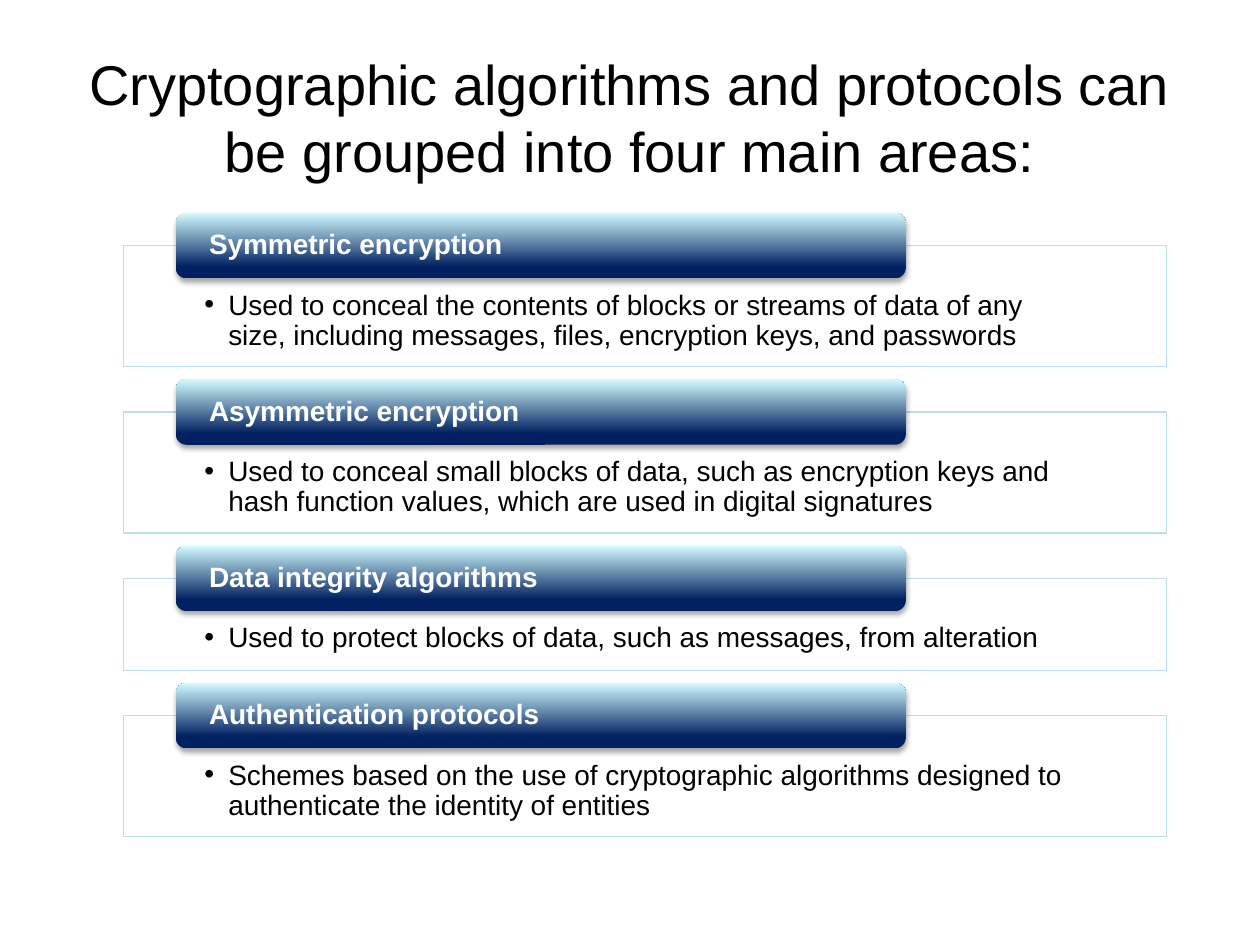
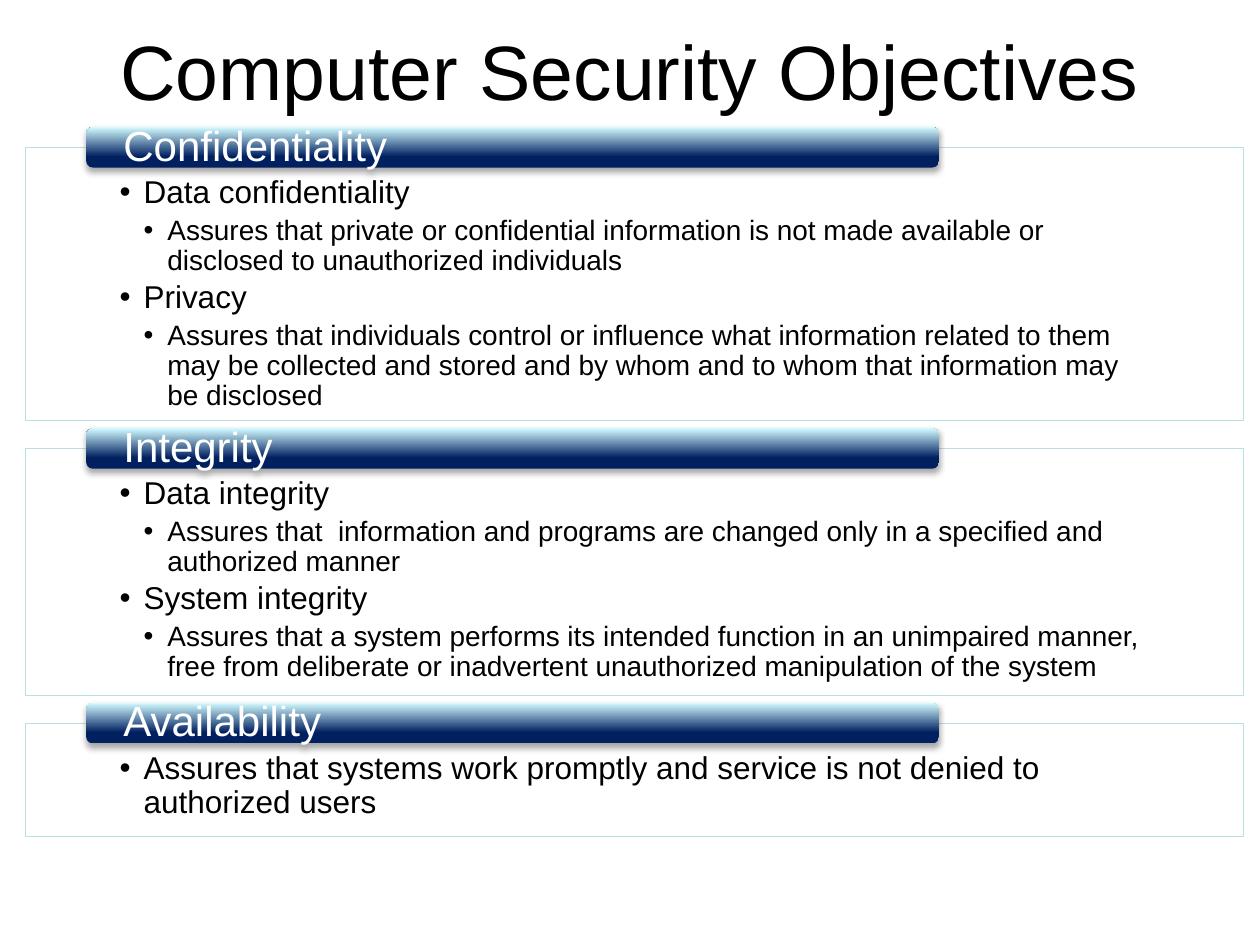
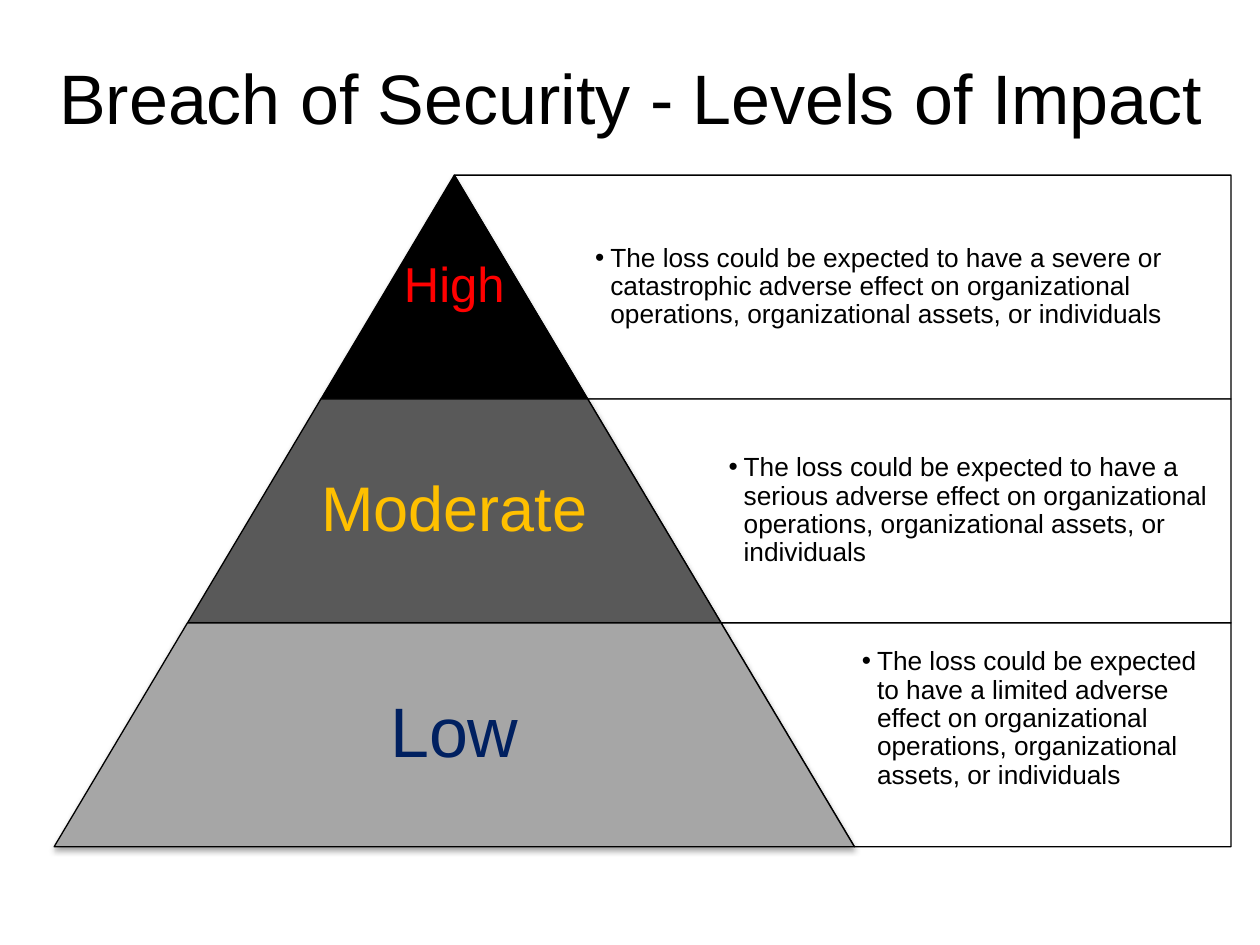
import dataclasses

import lxml.etree
import pptx
import pptx.dml.color
import pptx.enum.shapes
import pptx.enum.text
import pptx.oxml.ns
import pptx.util

RGBColor = pptx.dml.color.RGBColor
Shape = pptx.enum.shapes.MSO_SHAPE
Anchor = pptx.enum.text.MSO_ANCHOR
Align = pptx.enum.text.PP_ALIGN
qn = pptx.oxml.ns.qn

FONT = "Arial"
BLACK = RGBColor(0x00, 0x00, 0x00)
WHITE = RGBColor(0xFF, 0xFF, 0xFF)
NAVY = RGBColor(0x00, 0x20, 0x60)
ICE = RGBColor(0xD3, 0xFB, 0xFF)
PALE_TEAL = RGBColor(0xBB, 0xE0, 0xE3)
DARK_GREY = RGBColor(0x59, 0x59, 0x59)
LIGHT_GREY = RGBColor(0xA6, 0xA6, 0xA6)
RED = RGBColor(0xFF, 0x00, 0x00)
AMBER = RGBColor(0xFF, 0xC0, 0x00)

SLIDE_WIDTH, SLIDE_HEIGHT = 10, 7.5
LINE_SPACING = 0.9
SPACE_AFTER = 0.18  # share of the text size


@dataclasses.dataclass
class Box:
    """An area in inches."""
    left: float
    top: float
    width: float
    height: float

    def emu(self):
        return [pptx.util.Inches(length) for length in dataclasses.astuple(self)]


@dataclasses.dataclass
class PanelStyle:
    """Lengths in inches, sizes in points."""
    gap: float
    bar_height: float
    bar_rise: float
    body_top: float
    dark_stop: float
    heading_size: int
    heading_bold: bool
    body_sizes: tuple


# Shared text helpers

def set_frame(shape, anchor, left=0.0, top=0.0, right=0.0, bottom=0.0):
    frame = shape.text_frame
    frame.word_wrap = True
    frame.vertical_anchor = anchor
    frame.margin_left, frame.margin_top = pptx.util.Inches(left), pptx.util.Inches(top)
    frame.margin_right, frame.margin_bottom = pptx.util.Inches(right), pptx.util.Inches(bottom)
    return frame


def write_para(para, text, size, color=BLACK, align=Align.LEFT, bold=False, spacing=LINE_SPACING):
    para.text = text
    para.alignment = align
    para.line_spacing = spacing
    for span in para.runs:
        span.font.name = FONT
        span.font.size = pptx.util.Pt(size)
        span.font.bold = bold
        span.font.color.rgb = color


def write_bullets(frame, items, sizes, indent):
    """Write (level, text) items as a bulleted list."""
    for number, (level, text) in enumerate(items):
        para = frame.add_paragraph() if number else frame.paragraphs[0]
        write_para(para, text, sizes[level])
        para.space_after = pptx.util.Pt(sizes[level] * SPACE_AFTER)
        properties = para._p.get_or_add_pPr()
        properties.set("marL", str(pptx.util.Inches(indent * (level + 1))))
        properties.set("indent", str(-pptx.util.Inches(indent)))
        lxml.etree.SubElement(properties, qn("a:buFont"), typeface=FONT)
        lxml.etree.SubElement(properties, qn("a:buChar"), char="•")


def add_title(page, box, text, size):
    title = page.shapes.add_textbox(*box.emu())
    frame = set_frame(title, Anchor.MIDDLE, 0.1, 0.05, 0.1, 0.05)
    write_para(frame.paragraphs[0], text, size, align=Align.CENTER, spacing=1.0)


# Shared shape helpers

def add_outlined(page, kind, box, fill, line=None):
    shape = page.shapes.add_shape(kind, *box.emu())
    shape.shadow.inherit = False
    shape.fill.solid()
    shape.fill.fore_color.rgb = fill
    if line is None:
        shape.line.fill.background()
    else:
        shape.line.color.rgb = line
        shape.line.width = pptx.util.Pt(0.75)
    return shape


def make_translucent(shape):
    color = shape._element.spPr.find(qn("a:solidFill"))[0]
    lxml.etree.SubElement(color, qn("a:alpha"), val="90000")


def add_shadow(shape):
    effects = shape._element.spPr.find(qn("a:effectLst"))
    shadow = lxml.etree.SubElement(effects, qn("a:outerShdw"), blurRad="40000", dist="23000",
                                   dir="5400000", rotWithShape="0")
    color = lxml.etree.SubElement(shadow, qn("a:srgbClr"), val=str(BLACK))
    lxml.etree.SubElement(color, qn("a:alpha"), val="35000")


# Stacked panels, each with a heading bar over its top edge

def add_panel(page, box, style, heading, items):
    body = add_outlined(page, Shape.RECTANGLE, box, WHITE, PALE_TEAL)
    make_translucent(body)
    side = box.width * 0.0775
    frame = set_frame(body, Anchor.TOP, side, style.body_top, side, 0.12)
    write_bullets(frame, items, style.body_sizes, indent=0.19)

    bar_box = Box(box.left + box.width * 0.05, box.top - style.bar_rise,
                  box.width * 0.7, style.bar_height)
    bar = add_outlined(page, Shape.ROUNDED_RECTANGLE, bar_box, NAVY)
    add_shadow(bar)
    bar.fill.gradient()
    bar.fill.gradient_angle = 90
    dark, light = bar.fill.gradient_stops
    dark.position, dark.color.rgb = style.dark_stop, NAVY
    light.position, light.color.rgb = 1.0, ICE
    side = box.width * 0.029
    frame = set_frame(bar, Anchor.MIDDLE, side, 0, side, 0)
    write_para(frame.paragraphs[0], heading, style.heading_size, WHITE, bold=style.heading_bold)


def add_panels(page, box, style, panels):
    """Fill the box from the top; each panel is (height, heading, items)."""
    top = box.top + style.bar_rise
    for height, heading, items in panels:
        add_panel(page, Box(box.left, top, box.width, height), style, heading, items)
        top += height + style.gap


# Pyramid whose levels each have a note at their right

def add_pyramid(page, box, levels):
    """Each level is (label, size, label colour, fill, note, extra space below the note)."""
    row = box.height / len(levels)
    step = box.width * 0.34 / len(levels)
    apex = box.left + step * len(levels)
    right = box.left + box.width
    slope = step / row

    for number, (label, size, color, fill, note, extra) in enumerate(levels):
        top = box.top + number * row
        edge = apex + number * step
        half = (number + 1) * step

        backing = add_outlined(page, Shape.NON_ISOSCELES_TRAPEZOID,
                               Box(edge, top, right - edge, row), WHITE, BLACK)
        make_translucent(backing)
        backing.rotation = 180
        backing.adjustments[0], backing.adjustments[1] = 0, slope

        note_box = Box(edge + step, top, right - edge - step, row)
        note_text = page.shapes.add_textbox(*note_box.emu())
        frame = set_frame(note_text, Anchor.MIDDLE, 0.06, 0.06, 0.06, 0.06 + extra)
        write_bullets(frame, [(0, note)], (15,), indent=0.12)

        layer = add_outlined(page, Shape.TRAPEZOID, Box(apex - half, top, 2 * half, row), fill, BLACK)
        layer.adjustments[0] = slope
        add_shadow(layer)

        label_box = Box(apex - half * 0.65, top, half * 1.3, row)
        label_text = page.shapes.add_textbox(*label_box.emu())
        frame = set_frame(label_text, Anchor.MIDDLE)
        write_para(frame.paragraphs[0], label, size, color, Align.CENTER)


# Slides

def build_areas(page):
    add_title(page, Box(0.5, 0.3, 9, 1.25),
              "Cryptographic algorithms and protocols can be grouped into four main areas:", 32)
    style = PanelStyle(gap=0.36, bar_height=0.52, bar_rise=0.26, body_top=0.36, dark_stop=0.17,
                       heading_size=16, heading_bold=True, body_sizes=(16,))
    add_panels(page, Box(0.98, 1.69, 8.28, 4.94), style, [
        (0.96, "Symmetric encryption", [
            (0, "Used to conceal the contents of blocks or streams of data of any size, "
                "including messages, files, encryption keys, and passwords")]),
        (0.96, "Asymmetric encryption", [
            (0, "Used to conceal small blocks of data, such as encryption keys and "
                "hash function values, which are used in digital signatures")]),
        (0.73, "Data integrity algorithms", [
            (0, "Used to protect blocks of data, such as messages, from alteration")]),
        (0.96, "Authentication protocols", [
            (0, "Schemes based on the use of cryptographic algorithms designed to "
                "authenticate the identity of entities")]),
    ])


def build_objectives(page):
    add_title(page, Box(0, 0.04, SLIDE_WIDTH, 1.03), "Computer Security Objectives", 44)
    style = PanelStyle(gap=0.22, bar_height=0.32, bar_rise=0.16, body_top=0.23, dark_stop=0.27,
                       heading_size=24, heading_bold=False, body_sizes=(18, 16))
    add_panels(page, Box(0.2, 1.01, 9.67, 5.64), style, [
        (2.17, "Confidentiality", [
            (0, "Data confidentiality"),
            (1, "Assures that private or confidential information is not made available or "
                "disclosed to unauthorized individuals"),
            (0, "Privacy"),
            (1, "Assures that individuals control or influence what information related to them "
                "may be collected and stored and by whom and to whom that information may "
                "be disclosed")]),
        (1.96, "Integrity", [
            (0, "Data integrity"),
            (1, "Assures that  information and programs are changed only in a specified and "
                "authorized manner"),
            (0, "System integrity"),
            (1, "Assures that a system performs its intended function in an unimpaired manner, "
                "free from deliberate or inadvertent unauthorized manipulation of the system")]),
        (0.9, "Availability", [
            (0, "Assures that systems work promptly and service is not denied to "
                "authorized users")]),
    ])


def build_impact(page):
    add_title(page, Box(0.2, 0.3, 9.61, 0.93), "Breach of Security - Levels of Impact", 40)
    note = ("The loss could be expected to have a {} adverse effect on organizational "
            "operations, organizational assets, or individuals")
    add_pyramid(page, Box(0.43, 1.39, 9.34, 5.33), [
        ("High", 28, RED, BLACK, note.format("severe or catastrophic"), 0),
        ("Moderate", 36, AMBER, DARK_GREY, note.format("serious"), 0),
        ("Low", 40, NAVY, LIGHT_GREY, note.format("limited"), 0.25),
    ])


def main():
    deck = pptx.Presentation()
    deck.slide_width = pptx.util.Inches(SLIDE_WIDTH)
    deck.slide_height = pptx.util.Inches(SLIDE_HEIGHT)
    for build in (build_areas, build_objectives, build_impact):
        build(deck.slides.add_slide(deck.slide_layouts[6]))
    deck.save("out.pptx")


if __name__ == "__main__":
    main()
